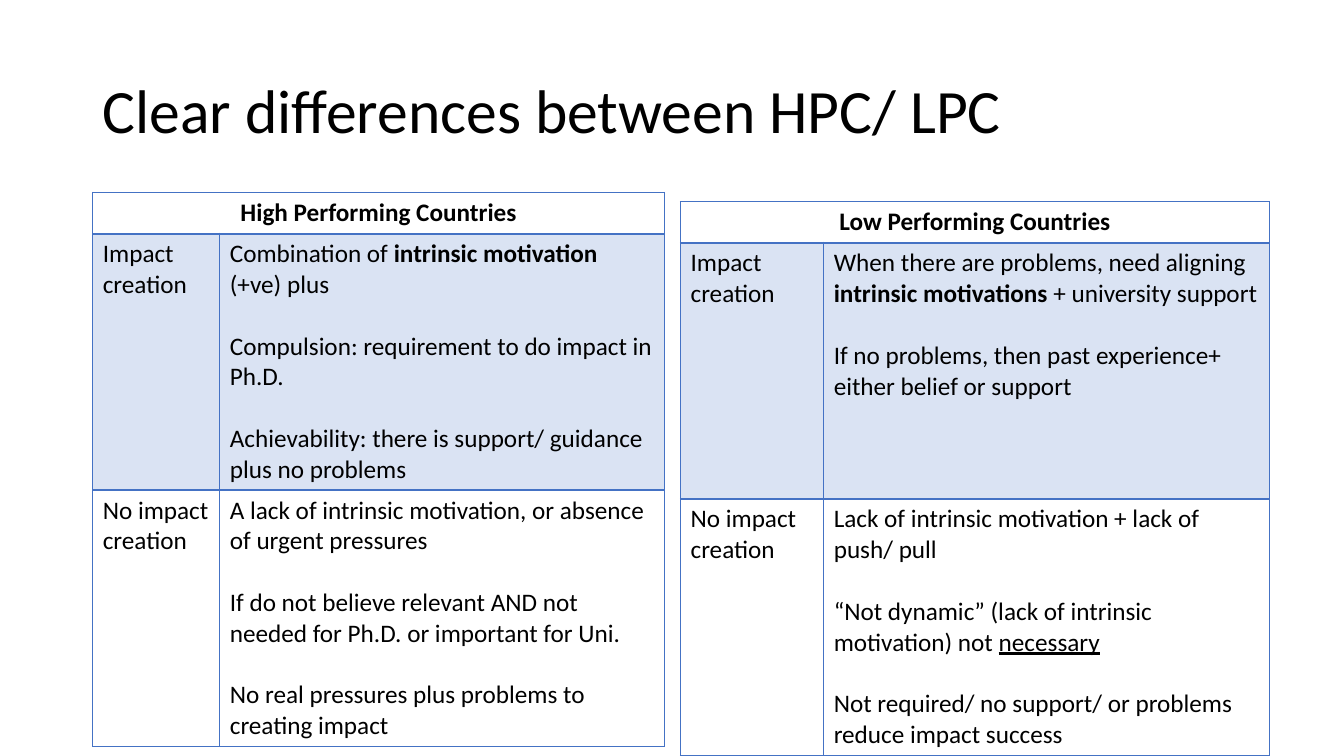
"""Build a slide that compares high and low performing countries in two tables."""
from lxml import etree
from pptx import Presentation
from pptx.dml.color import RGBColor
from pptx.enum import text
from pptx.oxml import ns
from pptx.util import Inches, Pt

BLACK = RGBColor(0x00, 0x00, 0x00)
WHITE = RGBColor(0xFF, 0xFF, 0xFF)
BLUE = RGBColor(0x44, 0x72, 0xC4)
PALE = RGBColor(0xDA, 0xE3, 0xF3)
FONT = "Calibri"
GAP = Pt(22)

HIGH = [
    [("Combination of ", ""), ("intrinsic motivation ", "bold"), ("(+ve) plus", "")],
    [("Compulsion: requirement to do impact in Ph.D.", "")],
    [("Achievability: there is support/ guidance plus no problems", "")],
]
NO_HIGH = [
    [("A lack of intrinsic motivation, or absence of urgent pressures", "")],
    [("If do not believe relevant AND not needed for Ph.D. or important for Uni.", "")],
    [("No real pressures plus problems to creating impact", "")],
]
LOW = [
    [("When there are problems, need aligning ", ""), ("intrinsic motivations ", "bold"),
     ("+ university support", "")],
    [("If no problems, then past experience+ either belief or support", "")],
]
NO_LOW = [
    [("Lack of intrinsic motivation + lack of push/ pull", "")],
    [("“Not dynamic” (lack of intrinsic motivation) not ", ""), ("necessary", "underline")],
    [("Not required/ no support/ or problems reduce impact success", "")],
]
TABLES = [
    (0.92, 1.91, (1.26, 4.41), "High Performing Countries", HIGH, NO_HIGH),
    (6.75, 2.0, (1.42, 4.42), "Low Performing Countries", LOW, NO_LOW),
]
ROWS = (0.41, 2.54, 2.54)


def edge(cell, row):
    props = cell._tc.get_or_add_tcPr()
    widths = {"L": 1, "R": 1, "T": 2 if row == 1 else 1, "B": 2 if row == 0 else 1}
    for spot, (side, width) in enumerate(widths.items()):
        line = etree.Element(ns.qn(f"a:ln{side}"), w=str(Pt(width)))
        fill = etree.SubElement(line, ns.qn("a:solidFill"))
        etree.SubElement(fill, ns.qn("a:srgbClr"), val=str(BLUE))
        props.insert(spot, line)


def write(cell, paras):
    frame = cell.text_frame
    for i, parts in enumerate(paras):
        para = frame.paragraphs[0] if i == 0 else frame.add_paragraph()
        para.font.name, para.font.size = FONT, Pt(18)
        para.font.color.rgb = BLACK
        if i:
            para.space_before = GAP
        for words, style in parts:
            run = para.add_run()
            run.text = words
            if style:
                setattr(run.font, style, True)


prs = Presentation()
prs.slide_width, prs.slide_height = Inches(13.33), Inches(7.5)
slide = prs.slides.add_slide(prs.slide_layouts[5])

title = slide.shapes.title
title.left, title.top = Inches(0.92), Inches(0.4)
title.width, title.height = Inches(11.5), Inches(1.45)
title.text_frame.text = "Clear differences between HPC/ LPC"
title.text_frame.vertical_anchor = text.MSO_ANCHOR.MIDDLE
head = title.text_frame.paragraphs[0]
head.alignment = text.PP_ALIGN.LEFT
head.line_spacing = 0.9
head.font.name, head.font.size = FONT, Pt(44)
head.font.color.rgb = BLACK

for left, top, cols, name, impact, none in TABLES:
    frame = slide.shapes.add_table(3, 2, Inches(left), Inches(top),
                                   Inches(sum(cols)), Inches(sum(ROWS)))
    table = frame.table
    table.first_row = table.horz_banding = False
    for col, width in zip(table.columns, cols):
        col.width = Inches(width)
    for row, height in zip(table.rows, ROWS):
        row.height = Inches(height)
    table.cell(0, 0).merge(table.cell(0, 1))
    grid = [
        [[[(name, "bold")]], []],
        [[[("Impact creation", "")]], impact],
        [[[("No impact creation", "")]], none],
    ]
    for r, line in enumerate(grid):
        for c, paras in enumerate(line):
            cell = table.cell(r, c)
            cell.fill.solid()
            cell.fill.fore_color.rgb = PALE if r == 1 else WHITE
            edge(cell, r)
            write(cell, paras)
    table.cell(0, 0).text_frame.paragraphs[0].alignment = text.PP_ALIGN.CENTER

prs.save("out.pptx")
